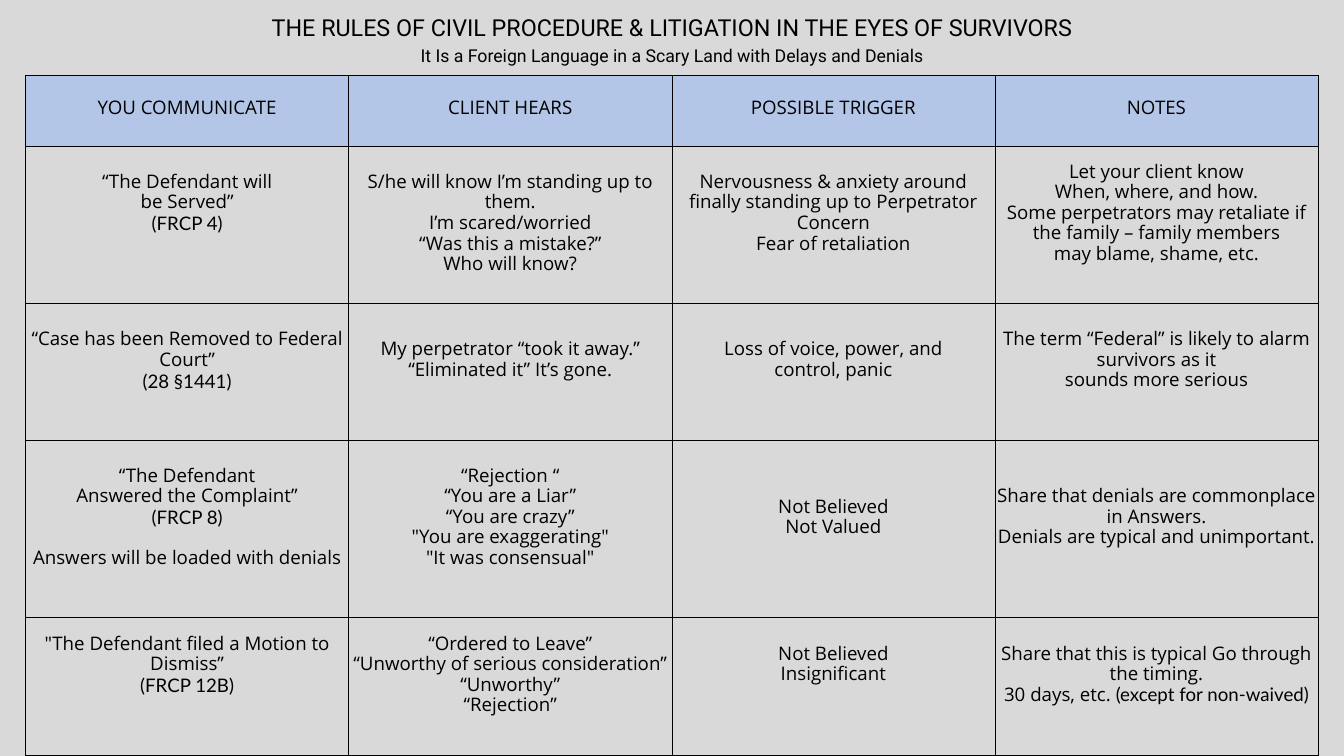
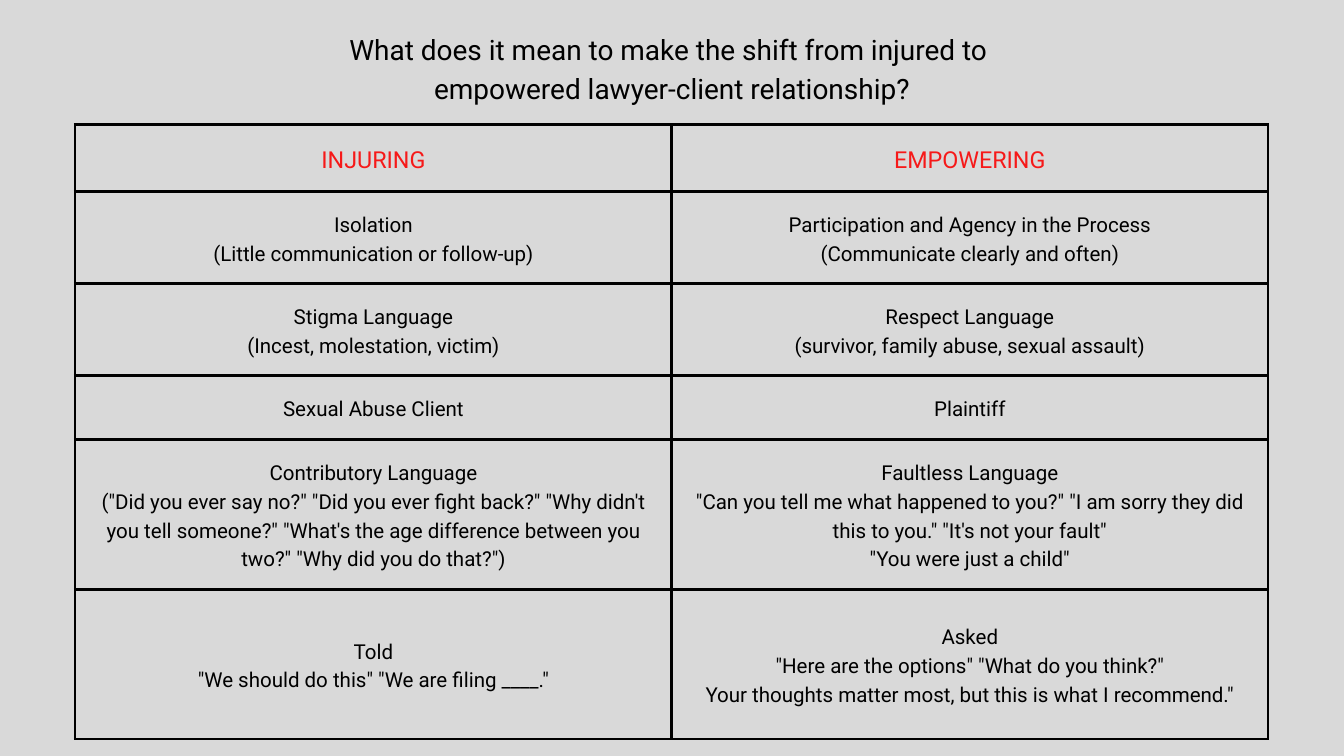
from lxml import etree
from pptx import Presentation
from pptx.dml.color import RGBColor
from pptx.enum.text import MSO_ANCHOR, PP_ALIGN
from pptx.oxml import parse_xml
from pptx.oxml.ns import nsdecls, qn
from pptx.util import Pt

CENTER = PP_ALIGN.CENTER
MIDDLE = MSO_ANCHOR.MIDDLE
COLORS = {"page": "D9D9D9", "ink": "000000", "head": "B4C6E7", "red": "F61919"}
SANS, SERVED, ROBOTO = "Open Sans", "Lato", "Roboto"
LEAD = 22

HEADS = ["YOU COMMUNICATE", "CLIENT HEARS", "POSSIBLE TRIGGER", "NOTES"]
RULES = [
    [
        "“The Defendant will\nbe Served”\n(FRCP 4)",
        "S/he will know I’m standing up to them.\nI’m scared/worried\n"
        "“Was this a mistake?”\nWho will know?",
        "Nervousness & anxiety around finally standing up to Perpetrator\n"
        "Concern\nFear of retaliation",
        "Let your client know\nWhen, where, and how.\n"
        "Some perpetrators may retaliate if the family – family members\n"
        "may blame, shame, etc.",
    ],
    [
        "“Case has been Removed to Federal Court”\n(28 §1441)",
        "My perpetrator “took it away.” “Eliminated it” It’s gone.",
        "Loss of voice, power, and\ncontrol, panic",
        "The term “Federal” is likely to alarm survivors as it\nsounds more serious",
    ],
    [
        "“The Defendant\nAnswered the Complaint”\n(FRCP 8)\n"
        "Answers will be loaded with denials",
        "“Rejection “\n“You are a Liar”\n“You are crazy”\n"
        "\"You are exaggerating\"\n\"It was consensual\"",
        "Not Believed\nNot Valued",
        "Share that denials are commonplace in Answers.\n"
        "Denials are typical and unimportant.",
    ],
    [
        "\"The Defendant filed a Motion to Dismiss”\n(FRCP 12B)",
        "“Ordered to Leave”\n“Unworthy of serious consideration”\n"
        "“Unworthy”\n“Rejection”",
        "Not Believed\nInsignificant",
        "Share that this is typical Go through the timing.\n"
        "30 days, etc. (except for non-waived)",
    ],
]
LIFTS = [[2, 0, 1, 1], [1, 1, 1, 1], [1, 1, 1, 1], [2, 1, 2, 1]]

SHIFTS = [
    ["INJURING", "EMPOWERING"],
    [
        "Isolation\n(Little communication or follow-up)",
        "Participation and Agency in the Process\n(Communicate clearly and often)",
    ],
    [
        "Stigma Language\n(Incest, molestation, victim)",
        "Respect Language\n(survivor, family abuse, sexual assault)",
    ],
    ["Sexual Abuse Client", "Plaintiff"],
    [
        "Contributory Language\n(\"Did you ever say no?\" \"Did you ever fight back?\" "
        "\"Why didn't you tell someone?\" \"What's the age difference between you two?\" "
        "\"Why did you do that?\")",
        "Faultless Language\n\"Can you tell me what happened to you?\" "
        "\"I am sorry they did this to you.\" \"It's not your fault\"\n"
        "\"You were just a child\"",
    ],
    [
        "Told\n\"We should do this\" \"We are filing ____.\"",
        "Asked\n\"Here are the options\" \"What do you think?\"\n"
        "Your thoughts matter most, but this is what I recommend.\"",
    ],
]


def rgb(name):
    """Return the named colour."""
    return RGBColor.from_string(COLORS[name])


def style(para, font, size, lead, color="ink"):
    """Centre a paragraph and format its runs."""
    para.alignment = CENTER
    para.line_spacing = Pt(lead)
    for run in para.runs:
        run.font.name = font
        run.font.size = Pt(size)
        run.font.color.rgb = rgb(color)


def cite(para):
    """Set the bracketed part of a paragraph in the citation font."""
    start, mark, rest = para.text.partition("(")
    if mark:
        para.text = start
        part = para.runs[0] if para.runs else para.add_run()
        if start:
            part = para.add_run()
        part.text = mark + rest
        return part
    return None


def add_page(deck):
    """Add a blank slide with the shared background."""
    slide = deck.slides.add_slide(deck.slide_layouts[6])
    slide.background.fill.solid()
    slide.background.fill.fore_color.rgb = rgb("page")
    return slide


def add_title(slide, box, lines):
    """Add a centred title from (text, size) lines."""
    frame = slide.shapes.add_textbox(*map(Pt, box)).text_frame
    frame.word_wrap = True
    frame.margin_left = frame.margin_right = Pt(0)
    frame.margin_top = frame.margin_bottom = Pt(0)
    frame.text = "\n".join(text for text, size in lines)
    for para, (text, size) in zip(frame.paragraphs, lines):
        style(para, ROBOTO, size, size * 1.4)


def add_edges(cell, width):
    """Draw the four borders of a cell."""
    props = cell._tc.get_or_add_tcPr()
    for spot, side in enumerate("LRTB"):
        line = parse_xml(f'<a:ln{side} {nsdecls("a")} w="{Pt(width)}"/>')
        fill = etree.SubElement(line, qn("a:solidFill"))
        etree.SubElement(fill, qn("a:srgbClr"), val=COLORS["ink"])
        props.insert(spot, line)


def add_grid(slide, left, top, wide, rows, cols, edge, inset):
    """Add a plain bordered table."""
    shape = slide.shapes.add_table(
        len(rows), cols, Pt(left), Pt(top), Pt(wide * cols), Pt(sum(rows)))
    table = shape.table
    table.first_row = table.horz_banding = False
    for col in table.columns:
        col.width = Pt(wide)
    for row, high in zip(table.rows, rows):
        row.height = Pt(high)
    for cell in table.iter_cells():
        cell.vertical_anchor = MIDDLE
        cell.margin_left = cell.margin_right = Pt(inset)
        cell.margin_top = cell.margin_bottom = Pt(inset)
        cell.fill.background()
        add_edges(cell, edge)
    return table


def fill_cell(cell, text, font, size, lead, color="ink"):
    """Write styled lines into a cell."""
    cell.text_frame.text = text
    for para in cell.text_frame.paragraphs:
        part = cite(para) if font == SANS else None
        style(para, font, size, lead, color)
        if part:
            part.font.name = SERVED


def add_rules(deck):
    """Build the slide on civil procedure."""
    slide = add_page(deck)
    add_title(slide, (260.6, 9.4, 918.7, 59.8), [
        ("THE RULES OF CIVIL PROCEDURE & LITIGATION IN THE EYES OF SURVIVORS", 25),
        ("It Is a Foreign Language in a Scary Land with Delays and Denials", 19)])
    table = add_grid(slide, 27.4, 80.6, 346.2,
                     [76.3, 167.8, 146.9, 190.1, 147.6], 4, 0.75, 1)
    for col, text in enumerate(HEADS):
        cell = table.cell(0, col)
        cell.fill.solid()
        cell.fill.fore_color.rgb = rgb("head")
        fill_cell(cell, text, SANS, 20, 20)
    for row, (texts, lifts) in enumerate(zip(RULES, LIFTS), 1):
        for col, (text, lift) in enumerate(zip(texts, lifts)):
            cell = table.cell(row, col)
            fill_cell(cell, text, SANS, 20, LEAD)
            cell.margin_bottom = Pt(1 + LEAD * lift)
    table.cell(3, 0).text_frame.paragraphs[-1].space_before = Pt(LEAD)


def add_shifts(deck):
    """Build the slide on injuring and empowering."""
    slide = add_page(deck)
    table = add_grid(slide, 80.6, 133.2, 639,
                     [72, 98.6, 98.6, 68.4, 160.6, 160.6], 2, 3, 15.1)
    for row, texts in enumerate(SHIFTS):
        look = (22, 30.8) if row else (25, 35, "red")
        for col, text in enumerate(texts):
            fill_cell(table.cell(row, col), text, ROBOTO, *look)
    add_title(slide, (40.3, 28.8, 1359.4, 79.9), [
        ("What does it mean to make the shift from injured to ", 30),
        ("empowered lawyer-client relationship?", 30)])


def main():
    """Build and save the deck."""
    deck = Presentation()
    deck.slide_width, deck.slide_height = Pt(1440), Pt(810)
    add_rules(deck)
    add_shifts(deck)
    deck.save("out.pptx")


if __name__ == "__main__":
    main()
